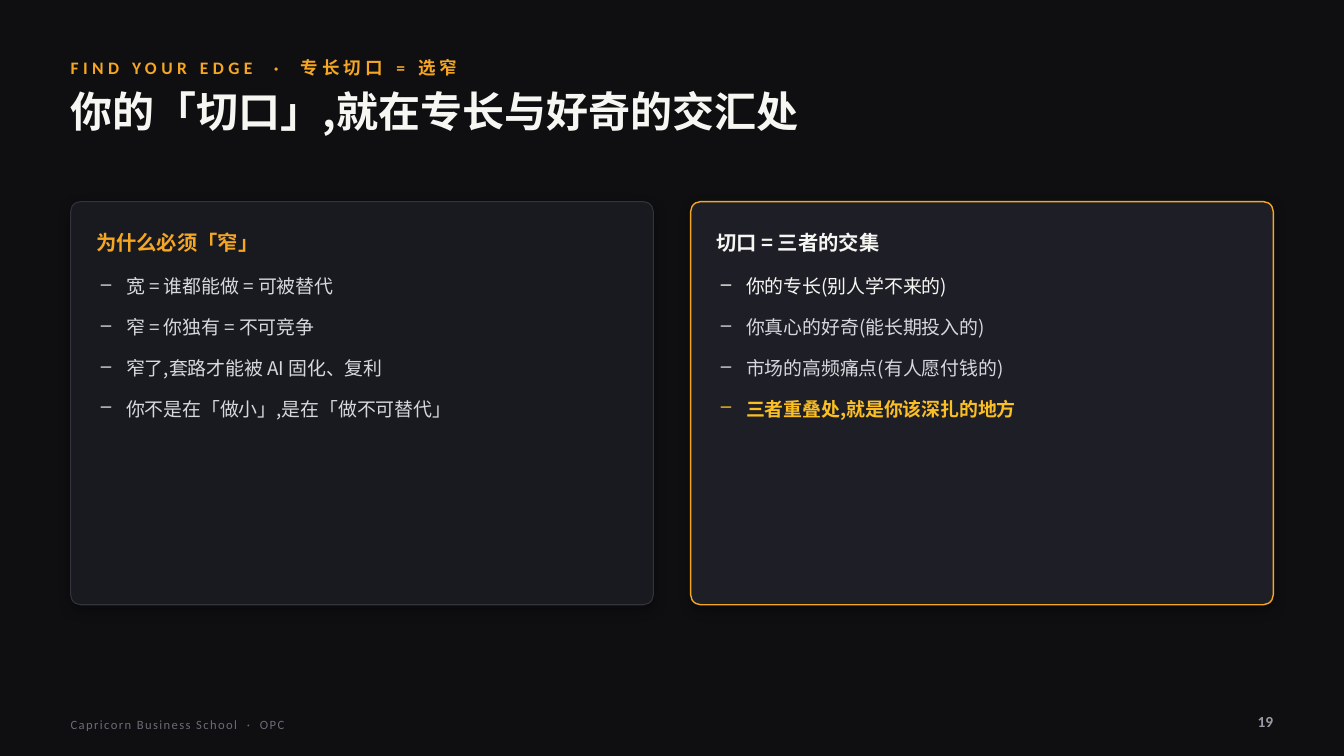
"""Build the slide on finding an edge where expertise and curiosity meet."""
from dataclasses import dataclass

from lxml.etree import SubElement
from pptx import Presentation
from pptx.dml.color import RGBColor
from pptx.enum.shapes import MSO_SHAPE
from pptx.enum.text import MSO_ANCHOR, MSO_AUTO_SIZE, PP_ALIGN
from pptx.oxml.ns import qn
from pptx.util import Cm, Pt


@dataclass(frozen=True)
class Theme:
    background: str = "0F0F12"
    accent: str = "F5A623"
    highlight: str = "FBBF24"
    bright: str = "F6F6F3"
    body: str = "D7D7DE"
    footer: str = "6B6B76"
    number: str = "9A9AA6"
    latin: str = "Calibri"
    chinese: str = "Noto Sans CJK SC"
    eyebrow_size: float = 12.5
    title_size: float = 30
    heading_size: float = 14.5
    body_size: float = 13.5
    footer_size: float = 9
    number_size: float = 11


THEME = Theme()

EYEBROW = "FIND YOUR EDGE  ·  专长切口 = 选窄"
TITLE = "你的「切口」,就在专长与好奇的交汇处"
FOOTER = "Capricorn Business School  ·  OPC"
PAGE_NUMBER = "19"
CARDS = [
    {
        "heading": ("为什么必须「窄」", THEME.accent),
        "fill": "191920",
        "line": ("33333E", 0.75),
        "points": [
            ("宽 = 谁都能做 = 可被替代", THEME.body, False),
            ("窄 = 你独有 = 不可竞争", THEME.body, False),
            ("窄了,套路才能被 AI 固化、复利", THEME.body, False),
            ("你不是在「做小」,是在「做不可替代」", THEME.body, False),
        ],
    },
    {
        "heading": ("切口 = 三者的交集", THEME.bright),
        "fill": "1E1E26",
        "line": (THEME.accent, 1),
        "points": [
            ("你的专长(别人学不来的)", THEME.bright, False),
            ("你真心的好奇(能长期投入的)", THEME.body, False),
            ("市场的高频痛点(有人愿付钱的)", THEME.body, False),
            ("三者重叠处,就是你该深扎的地方", THEME.highlight, True),
        ],
    },
]

SLIDE_WIDTH, SLIDE_HEIGHT = 33.86, 19.05
MARGIN = 1.78
CONTENT_WIDTH = SLIDE_WIDTH - 2 * MARGIN
CARD_TOP, CARD_WIDTH, CARD_HEIGHT = 5.08, 14.68, 10.16
CARD_STEP = CONTENT_WIDTH - CARD_WIDTH
NUMBER_WIDTH = 2.03


def color(code):
    """Turn a hex code into a colour."""
    return RGBColor.from_string(code)


def set_frame(box, left, top, width, height, anchor):
    """Place a text shape and clear its insets."""
    box.left, box.top, box.width, box.height = map(Cm, (left, top, width, height))
    frame = box.text_frame
    frame.word_wrap = True
    frame.auto_size = MSO_AUTO_SIZE.NONE
    frame.vertical_anchor = anchor
    frame.margin_left = frame.margin_right = frame.margin_top = frame.margin_bottom = 0
    return frame


def style(para, size, code, bold=False, font=THEME.chinese, spacing=0):
    """Format every run of a paragraph."""
    for span in para.runs:
        span.font.size = Pt(size)
        span.font.bold = bold
        span.font.color.rgb = color(code)
        span.font.name = font
        properties = span.font._element
        SubElement(properties, qn("a:ea")).set("typeface", THEME.chinese)
        if spacing:
            properties.set("spc", str(round(spacing * 100)))


def add_line(page, text, place, size, code, **options):
    """Add a one-line text box centred on its height."""
    frame = set_frame(page.shapes.add_textbox(0, 0, 0, 0), *place, MSO_ANCHOR.MIDDLE)
    frame.text = text
    para = frame.paragraphs[0]
    style(para, size, code, **options)
    return para


def add_title(page):
    """Move and format the title placeholder."""
    place = (MARGIN, 2.16, CONTENT_WIDTH, 2.29)
    frame = set_frame(page.shapes.title, *place, MSO_ANCHOR.TOP)
    frame.text = TITLE
    para = frame.paragraphs[0]
    para.alignment = PP_ALIGN.LEFT
    style(para, THEME.title_size, THEME.bright, bold=True)


def add_shadow(shape):
    """Give a shape a soft shadow below it."""
    shape.shadow.inherit = False
    effects = shape._element.spPr.find(qn("a:effectLst"))
    shadow = SubElement(effects, qn("a:outerShdw"), blurRad=str(Pt(9)),
                        dist=str(Pt(3)), dir="5400000", algn="t", rotWithShape="0")
    shade = SubElement(shadow, qn("a:srgbClr"), val="000000")
    SubElement(shade, qn("a:alpha"), val="34000")


def add_points(page, points, place):
    """Add a list with dash bullets."""
    frame = set_frame(page.shapes.add_textbox(0, 0, 0, 0), *place, MSO_ANCHOR.TOP)
    frame.text = "\n".join(text for text, _, _ in points)
    indent = Cm(0.64)
    for para, (_, code, bold) in zip(frame.paragraphs, points):
        properties = para._p.get_or_add_pPr()
        properties.set("marL", str(indent))
        properties.set("indent", str(-indent))
        SubElement(properties, qn("a:buChar"), char="–")
        para.line_spacing = 1.12
        para.space_after = Pt(11)
        style(para, THEME.body_size, code, bold=bold)


def add_card(page, card, left):
    """Add a rounded panel with its heading and list."""
    panel = page.shapes.add_shape(MSO_SHAPE.ROUNDED_RECTANGLE, Cm(left), Cm(CARD_TOP),
                                  Cm(CARD_WIDTH), Cm(CARD_HEIGHT))
    panel.adjustments[0] = 0.025
    panel.fill.solid()
    panel.fill.fore_color.rgb = color(card["fill"])
    line_code, line_width = card["line"]
    panel.line.color.rgb = color(line_code)
    panel.line.width = Pt(line_width)
    add_shadow(panel)
    heading, code = card["heading"]
    add_line(page, heading, (left + 0.64, CARD_TOP + 0.51, 12.7, 1.02),
             THEME.heading_size, code, bold=True)
    add_points(page, card["points"], (left + 0.76, CARD_TOP + 1.78, 13.21, 7.87))


def main():
    """Build and save the deck."""
    deck = Presentation()
    deck.slide_width, deck.slide_height = Cm(SLIDE_WIDTH), Cm(SLIDE_HEIGHT)
    page = deck.slides.add_slide(deck.slide_layouts.get_by_name("Title Only"))
    page.background.fill.solid()
    page.background.fill.fore_color.rgb = color(THEME.background)

    add_line(page, EYEBROW, (MARGIN, 1.32, CONTENT_WIDTH, 0.76), THEME.eyebrow_size,
             THEME.accent, bold=True, font=THEME.latin, spacing=3.2)
    add_title(page)
    for index, card in enumerate(CARDS):
        add_card(page, card, MARGIN + index * CARD_STEP)
    add_line(page, FOOTER, (MARGIN, 17.88, 17.78, 0.76), THEME.footer_size,
             THEME.footer, font=THEME.latin, spacing=1)
    number = add_line(page, PAGE_NUMBER,
                      (SLIDE_WIDTH - MARGIN - NUMBER_WIDTH, 17.78, NUMBER_WIDTH, 0.81),
                      THEME.number_size, THEME.number, bold=True, font=THEME.latin)
    number.alignment = PP_ALIGN.RIGHT
    deck.save("out.pptx")


if __name__ == "__main__":
    main()
